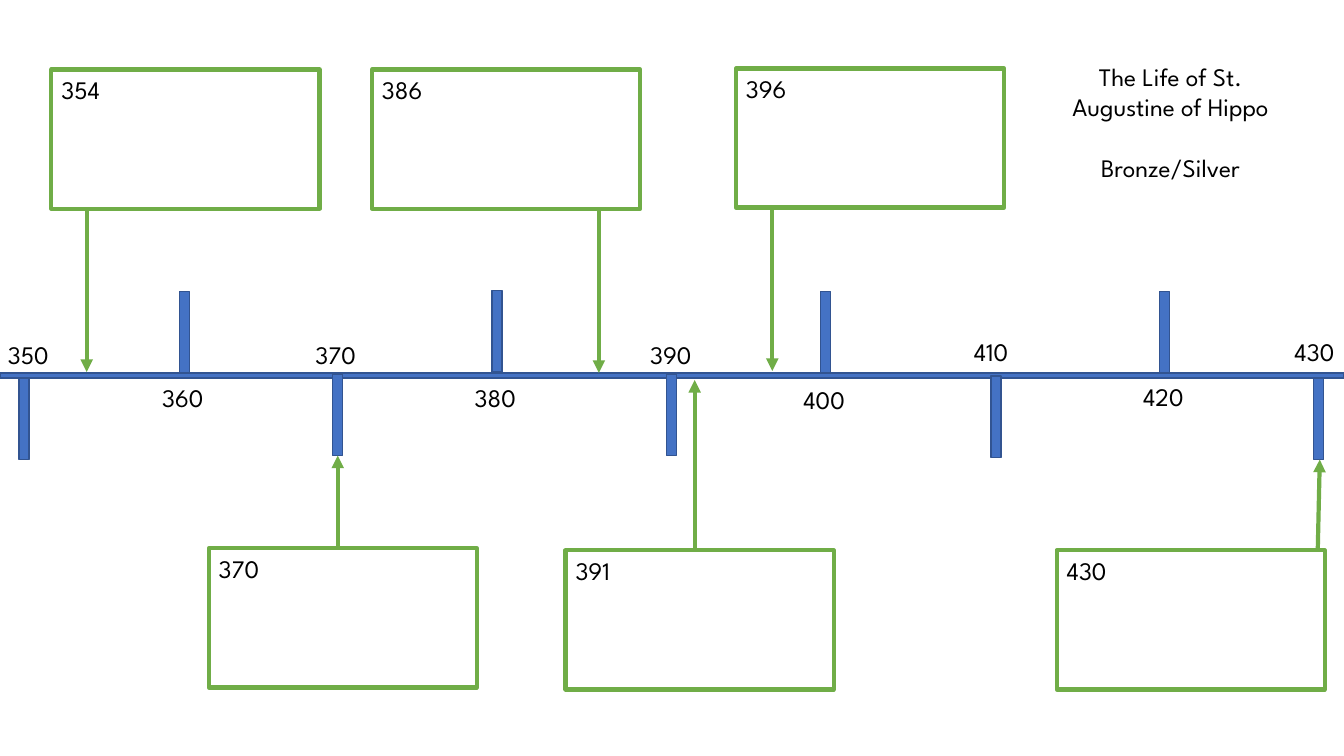
from pptx import Presentation
from pptx.dml.color import RGBColor
from pptx.enum.shapes import MSO_CONNECTOR, MSO_SHAPE
from pptx.enum.text import MSO_AUTO_SIZE, PP_ALIGN
from pptx.oxml.ns import qn
from pptx.util import Pt
from lxml import etree

SCALE = 9144  # EMU per px, 100 px to the inch
COLORS = {"bar": "4472C4", "bar_edge": "325491", "event": "70AD47",
          "paper": "FFFFFF", "text": "000000"}


class TimelineSlide:
    font_name = "League Spartan"
    font_size = Pt(18)

    def __init__(self, presentation):
        self.slide = presentation.slides.add_slide(presentation.slide_layouts[6])

    def color(self, name):
        return RGBColor.from_string(COLORS[name])

    def rectangle(self, left, top, width, height, fill, edge, edge_width):
        shape = self.slide.shapes.add_shape(
            MSO_SHAPE.RECTANGLE, *(v * SCALE for v in (left, top, width, height)))
        shape.shadow.inherit = False
        shape.fill.solid()
        shape.fill.fore_color.rgb = self.color(fill)
        shape.line.color.rgb = self.color(edge)
        shape.line.width = Pt(edge_width)

    def bar(self, left, top, width, height):
        self.rectangle(left, top, width, height, "bar", "bar_edge", 1)

    def text(self, left, top, width, height, lines, align=PP_ALIGN.LEFT, gap=0):
        shape = self.slide.shapes.add_textbox(
            *(v * SCALE for v in (left, top, width, height)))
        frame = shape.text_frame
        frame.word_wrap = True
        frame.auto_size = MSO_AUTO_SIZE.SHAPE_TO_FIT_TEXT
        for index, line in enumerate(lines):
            paragraph = frame.add_paragraph() if index else frame.paragraphs[0]
            paragraph.text = line
            paragraph.alignment = align
            if index:
                paragraph.space_before = Pt(gap)
            paragraph.font.name = self.font_name
            paragraph.font.size = self.font_size
            paragraph.font.color.rgb = self.color("text")

    def year(self, left, top, year):
        self.text(left, top, 64, 40, [str(year)])

    def arrow(self, start, end):
        connector = self.slide.shapes.add_connector(
            MSO_CONNECTOR.STRAIGHT, *(v * SCALE for v in (*start, *end)))
        connector.line.color.rgb = self.color("event")
        connector.line.width = Pt(3)
        etree.SubElement(connector.line._get_or_add_ln(), qn("a:tailEnd"), type="triangle")
        etree.SubElement(connector._element.spPr, qn("a:effectLst"))

    def event(self, year, left, top, start, end):
        self.rectangle(left, top, 266, 138, "paper", "event", 3)
        self.arrow(start, end)
        self.year(left, top, year)


def main():
    presentation = Presentation()
    presentation.slide_width = 1333 * SCALE
    presentation.slide_height = 750 * SCALE
    timeline = TimelineSlide(presentation)

    # Axis with one tick per decade: tick left, tick top, label left, label top
    timeline.bar(0, 370, 1333, 5)
    decades = [(19, 375, -2, 332), (178, 289, 151, 374), (330, 371, 303, 332),
               (488, 288, 461, 374), (661, 371, 635, 332), (814, 289, 787, 376),
               (983, 373, 956, 329), (1150, 289, 1124, 373), (1303, 375, 1274, 329)]
    for tick_left, tick_top, _, _ in decades:
        timeline.bar(tick_left, tick_top, 10, 81)
    for index, (_, _, label_left, label_top) in enumerate(decades):
        timeline.year(label_left, label_top, 350 + 10 * index)

    # Events: year, box left, box top, arrow start, arrow end
    events = [(354, 51, 69, (86, 206), (86, 369)),
              (370, 207, 544, (335, 544), (335, 452)),
              (386, 369, 69, (594, 207), (594, 370)),
              (391, 561, 546, (689, 546), (689, 377)),
              (396, 730, 68, (766, 206), (766, 368)),
              (430, 1048, 546, (1307, 546), (1309, 456))]
    for event in events:
        timeline.event(*event)

    # Title
    timeline.text(1041, 56, 240, 162,
                  ["The Life of St. Augustine of Hippo", "Bronze/Silver"],
                  PP_ALIGN.CENTER, gap=22)
    presentation.save("out.pptx")


if __name__ == "__main__":
    main()
